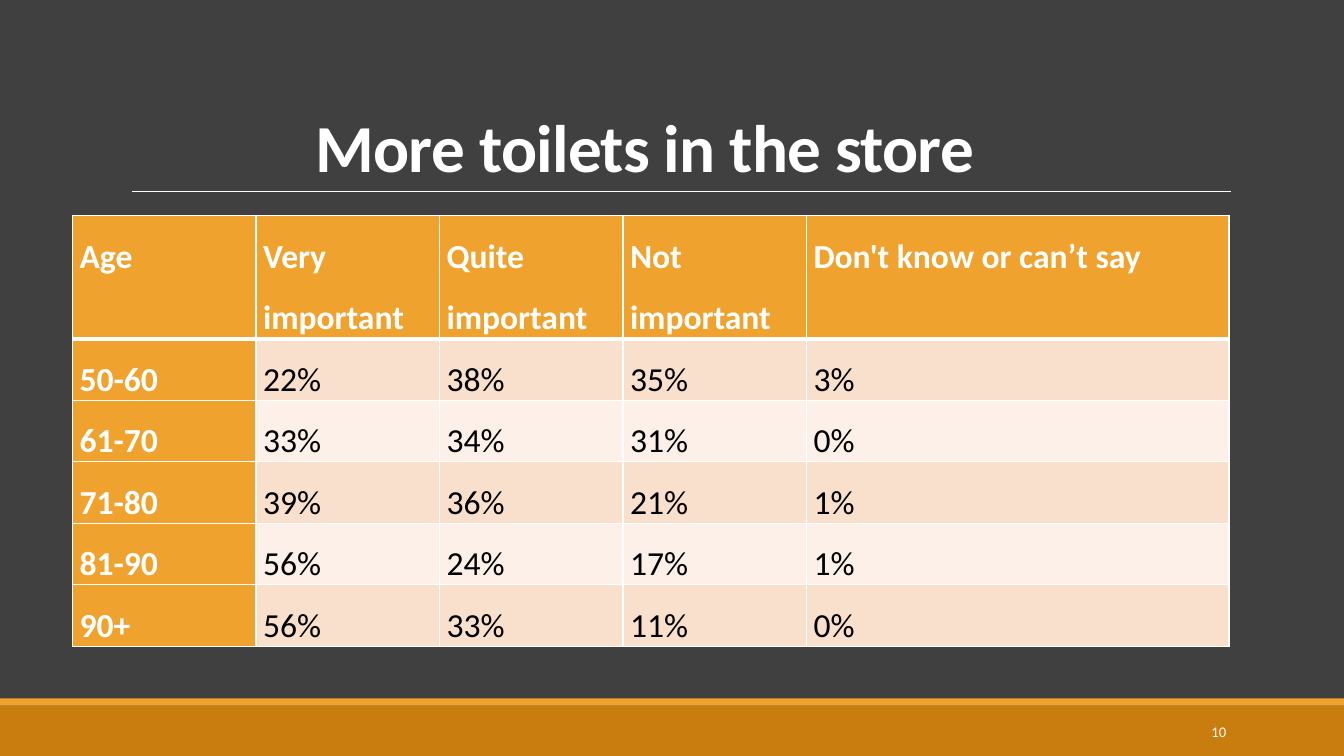
"""Builds the slide on wanting more toilets in the store, by age group."""
from lxml import etree
from pptx import Presentation
from pptx import util as u
from pptx.dml.color import RGBColor
from pptx.enum import shapes, text
from pptx.oxml.ns import qn

TITLE = "More toilets in the store"
PAGE = "10"
ROWS = [
    ("Age", "Very important", "Quite important", "Not important", "Don't know or can’t say"),
    ("50-60", "22%", "38%", "35%", "3%"),
    ("61-70", "33%", "34%", "31%", "0%"),
    ("71-80", "39%", "36%", "21%", "1%"),
    ("81-90", "56%", "24%", "17%", "1%"),
    ("90+", "56%", "33%", "11%", "0%"),
]
WIDTHS = (1.82, 1.82, 1.82, 1.82, 4.19)
HEIGHTS = (1.04, 0.52, 0.52, 0.52, 0.52, 0.52)
BARS = [(7, 0.5, "brown"), (6.93, 0.07, "gold")]
COLORS = {"back": "404040", "brown": "C87D0E", "gold": "F0A22E", "white": "FFFFFF",
          "black": "000000", "dark": "F9E0CD", "light": "FCF0E8"}


def color(name):
    return RGBColor.from_string(COLORS[name])


def paint(fill, name):
    fill.solid()
    fill.fore_color.rgb = color(name)


def style(par, size, name="white", bold=False):
    font = par.font
    font.name, font.size, font.bold = "Calibri", u.Pt(size), bold
    font.color.rgb = color(name)


def border(cell, row):
    props = cell._tc.get_or_add_tcPr()
    for side in "LRTB":
        thick = (row, side) in ((0, "B"), (1, "T"))
        line = etree.SubElement(props, qn(f"a:ln{side}"), w=str(u.Pt(3 if thick else 1)))
        fill = etree.SubElement(line, qn("a:solidFill"))
        etree.SubElement(fill, qn("a:srgbClr"), val=COLORS["white"])


def add_bars(slide):
    for top, high, name in BARS:
        bar = slide.shapes.add_shape(shapes.MSO_SHAPE.RECTANGLE, 0, u.Inches(top),
                                     u.Inches(13.33), u.Inches(high))
        bar.shadow.inherit = False
        paint(bar.fill, name)
        bar.line.fill.background()


def add_rule(slide):
    rule = slide.shapes.add_connector(shapes.MSO_CONNECTOR.STRAIGHT, u.Inches(1.31),
                                      u.Inches(1.9), u.Inches(12.21), u.Inches(1.9))
    rule.line.color.rgb = color("white")
    rule.line.width = u.Pt(0.5)
    etree.SubElement(rule._element.spPr, qn("a:effectLst"))


def set_title(slide):
    title = slide.shapes.title
    title.left, title.top = u.Inches(1.2), u.Inches(0.31)
    title.width, title.height = u.Inches(11), u.Inches(1.59)
    frame = title.text_frame
    frame.text = TITLE
    frame.auto_size = text.MSO_AUTO_SIZE.NONE
    frame.vertical_anchor = text.MSO_ANCHOR.BOTTOM
    frame.margin_left = u.Inches(1.93)
    par = frame.paragraphs[0]
    par.alignment = text.PP_ALIGN.LEFT
    par.line_spacing = 0.85
    style(par, 48, bold=True)
    par.runs[0].font._element.set("spc", "-50")


def add_grid(slide):
    grid = slide.shapes.add_table(len(ROWS), len(WIDTHS), u.Inches(0.72), u.Inches(2.14),
                                  u.Inches(sum(WIDTHS)), u.Inches(sum(HEIGHTS))).table
    for col, wide in zip(grid.columns, WIDTHS):
        col.width = u.Inches(wide)
    for r, (high, words) in enumerate(zip(HEIGHTS, ROWS)):
        grid.rows[r].height = u.Inches(high)
        for c, word in enumerate(words):
            cell = grid.cell(r, c)
            head = r == 0 or c == 0
            cell.text = word
            cell.margin_left = cell.margin_right = u.Inches(0.07)
            cell.margin_top = cell.margin_bottom = 0
            border(cell, r)
            paint(cell.fill, "gold" if head else "dark" if r % 2 else "light")
            par = cell.text_frame.paragraphs[0]
            par.line_spacing = 1.5
            style(par, 24, "white" if head else "black", head)


def add_page(slide):
    box = slide.shapes.add_textbox(u.Inches(10.83), u.Inches(7.06), u.Inches(1.43), u.Inches(0.4))
    frame = box.text_frame
    frame.word_wrap = True
    frame.vertical_anchor = text.MSO_ANCHOR.MIDDLE
    frame.text = PAGE
    par = frame.paragraphs[0]
    par.alignment = text.PP_ALIGN.RIGHT
    style(par, 10.5)


def main():
    deck = Presentation()
    deck.slide_width, deck.slide_height = u.Inches(13.33), u.Inches(7.5)
    slide = deck.slides.add_slide(deck.slide_layouts[5])
    paint(slide.background.fill, "back")
    add_bars(slide)
    add_rule(slide)
    set_title(slide)
    add_grid(slide)
    add_page(slide)
    deck.save("out.pptx")


if __name__ == "__main__":
    main()
